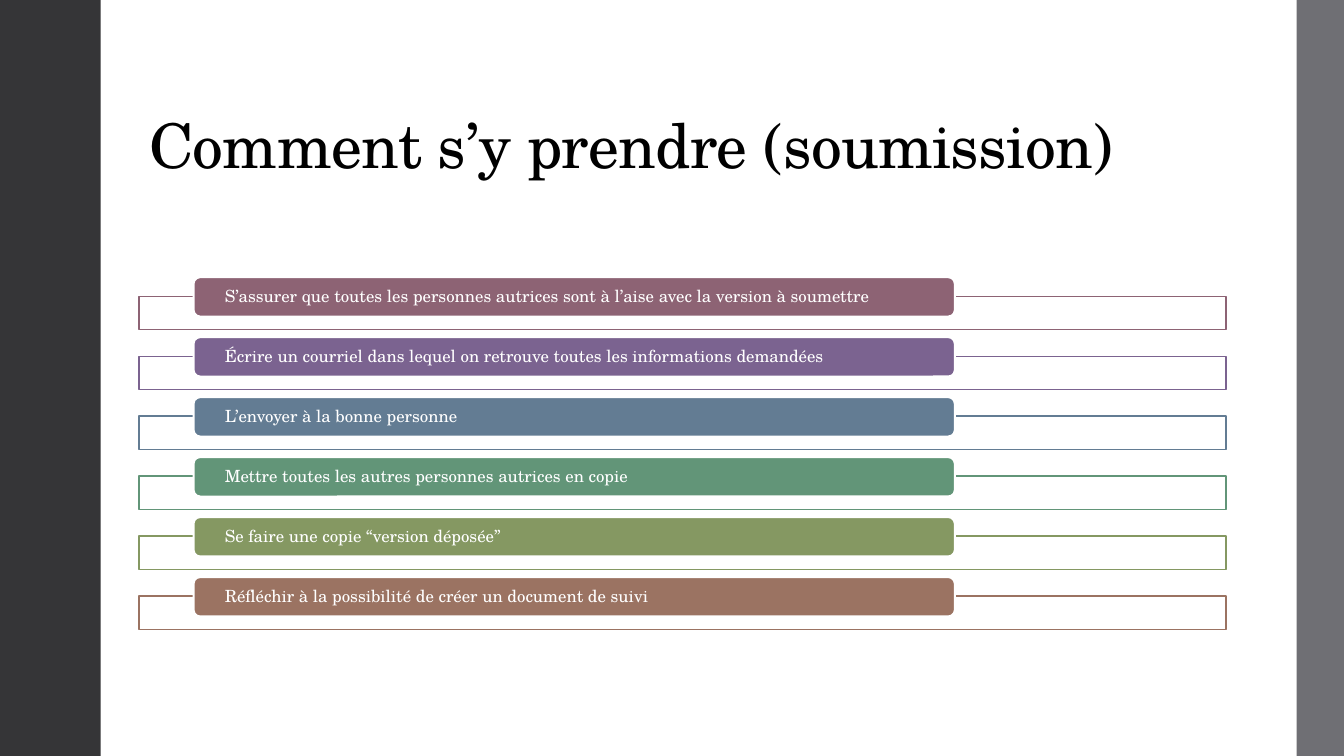
import pptx
import pptx.util
from pptx.dml.color import RGBColor
from pptx.enum.shapes import MSO_SHAPE
from pptx.enum.text import MSO_ANCHOR, PP_ALIGN
from pptx.oxml.xmlchemy import OxmlElement
from pptx.util import Inches, Pt

TITLE = "Comment s’y prendre (soumission)"
STEPS = [
    ("S’assurer que toutes les personnes autrices sont à l’aise avec la version à soumettre",
     RGBColor(0x8D, 0x63, 0x74)),
    ("Écrire un courriel dans lequel on retrouve toutes les informations demandées",
     RGBColor(0x7B, 0x63, 0x90)),
    ("L’envoyer à la bonne personne", RGBColor(0x63, 0x7C, 0x93)),
    ("Mettre toutes les autres personnes autrices en copie", RGBColor(0x62, 0x95, 0x78)),
    ("Se faire une copie “version déposée”", RGBColor(0x85, 0x98, 0x62)),
    ("Réfléchir à la possibilité de créer un document de suivi", RGBColor(0x9B, 0x73, 0x62)),
]

FONT = "TeX Gyre Schola"
WHITE = RGBColor(0xFF, 0xFF, 0xFF)
BLACK = RGBColor(0, 0, 0)
DARK = RGBColor(0x35, 0x35, 0x37)
GREY = RGBColor(0x6F, 0x6F, 0x74)

SLIDE_W, SLIDE_H = 13.33, 7.5
LEFT, WIDTH = 1.38, 10.78
FIRST_TOP, PITCH = 2.75, 0.595
LABEL_INDENT, LABEL_W, LABEL_H = 0.54, 7.55, 0.39
FRAME_DROP, FRAME_H = 0.19, 0.33


def add_box(s, kind, x, y, w, h, fill, line=None, line_pt=1):
    sp = s.shapes.add_shape(kind, Inches(x), Inches(y), Inches(w), Inches(h))
    sp.shadow.inherit = False
    sp.fill.solid()
    sp.fill.fore_color.rgb = fill
    if line is None:
        sp.line.fill.background()
    else:
        sp.line.color.rgb = line
        sp.line.width = Pt(line_pt)
    return sp


def set_opacity(sp, percent):
    alpha = OxmlElement("a:alpha")
    alpha.set("val", str(percent * 1000))
    sp.fill._xPr.solidFill.srgbClr.append(alpha)


def write(sp, text, size, color, anchor):
    tf = sp.text_frame
    tf.word_wrap = True
    tf.vertical_anchor = anchor
    p = tf.paragraphs[0]
    p.alignment = PP_ALIGN.LEFT
    p.line_spacing = 0.9
    r = p.add_run()
    r.text = text
    r.font.name = FONT
    r.font.size = Pt(size)
    r.font.color.rgb = color
    return r


def add_step(s, top, text, color):
    frame = add_box(s, MSO_SHAPE.RECTANGLE, LEFT, top + FRAME_DROP, WIDTH, FRAME_H,
                    WHITE, color, 1.1)
    set_opacity(frame, 90)
    label = add_box(s, MSO_SHAPE.ROUNDED_RECTANGLE, LEFT + LABEL_INDENT, top,
                    LABEL_W, LABEL_H, color, WHITE, 1.35)
    tf = label.text_frame
    tf.margin_left = tf.margin_right = Inches(0.29)
    tf.margin_top = tf.margin_bottom = 0
    write(label, text, 12, WHITE, MSO_ANCHOR.MIDDLE)


def main():
    prs = pptx.Presentation()
    prs.slide_width, prs.slide_height = Inches(SLIDE_W), Inches(SLIDE_H)
    s = prs.slides.add_slide(prs.slide_layouts[6])
    s.background.fill.solid()
    s.background.fill.fore_color.rgb = WHITE

    for x, w, color in [(0, 1, DARK), (12.86, SLIDE_W - 12.86, GREY)]:
        add_box(s, MSO_SHAPE.RECTANGLE, x, 0, w, SLIDE_H, color)

    title = s.shapes.add_textbox(Inches(LEFT), Inches(0.4), Inches(WIDTH), Inches(1.45))
    r = write(title, TITLE, 44, BLACK, MSO_ANCHOR.BOTTOM)
    r.font._element.set("spc", "-50")

    for i, (text, color) in enumerate(STEPS):
        add_step(s, FIRST_TOP + i * PITCH, text, color)

    prs.save("out.pptx")


if __name__ == "__main__":
    main()
